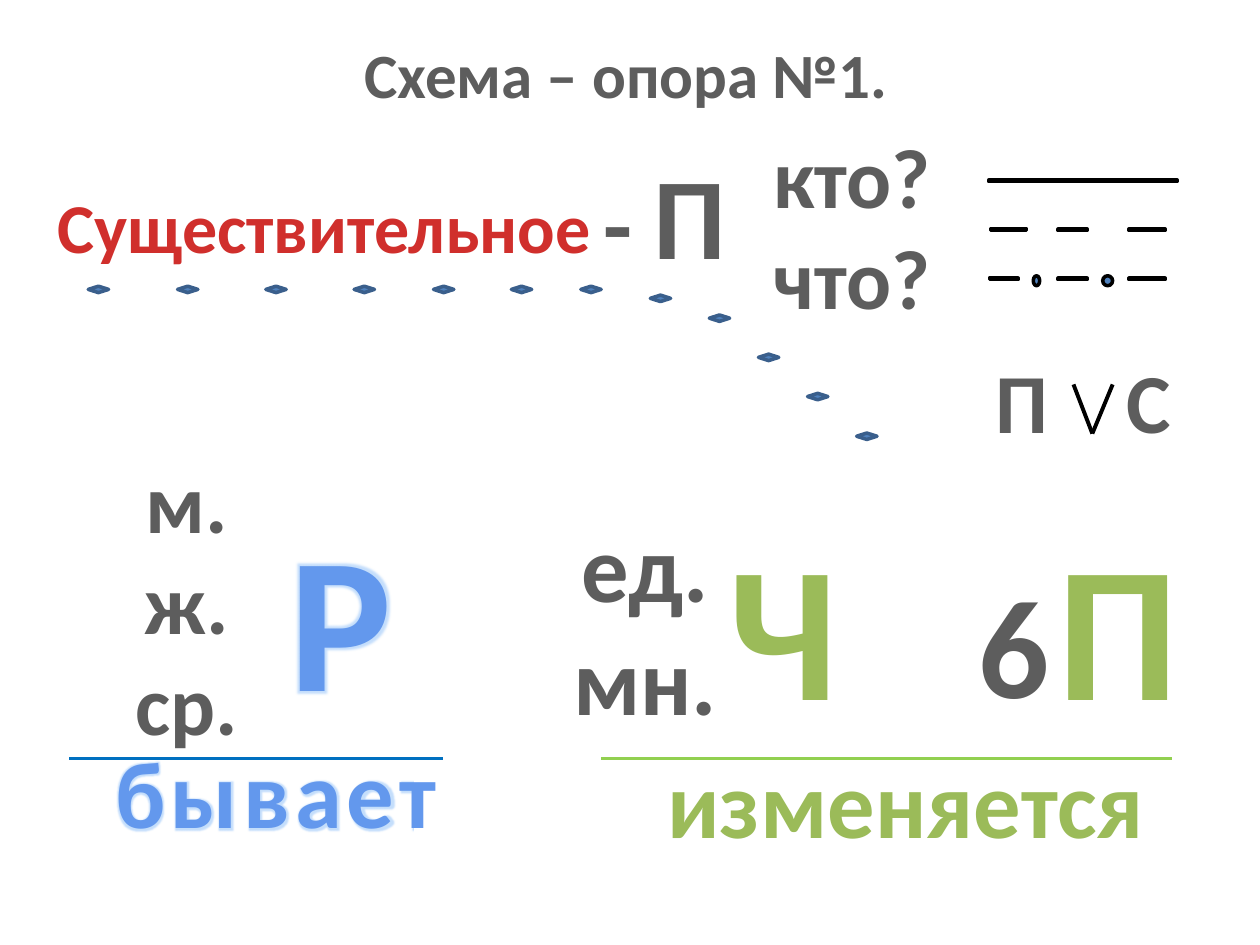
import pptx
import pptx.util
from lxml import etree
from pptx.dml.color import RGBColor
from pptx.enum.shapes import MSO_CONNECTOR, MSO_SHAPE
from pptx.enum.text import MSO_ANCHOR, PP_ALIGN
from pptx.oxml.ns import qn
from pptx.util import Cm, Pt

GREY = RGBColor(0x5D, 0x5D, 0x5D)
RED = RGBColor(0xD0, 0x2F, 0x2C)
GREEN = RGBColor(0x9B, 0xBB, 0x59)
BLUE = RGBColor(0x63, 0x98, 0xED)
BLACK = RGBColor(0, 0, 0)
MARK_FILL = RGBColor(0x4F, 0x81, 0xBD)
DIAMOND_LINE = RGBColor(0x3A, 0x5F, 0x8C)
LIME = RGBColor(0x92, 0xD0, 0x50)
AZURE = RGBColor(0x00, 0x70, 0xC0)
GLOW = "A6CDFB"

TITLE = "Схема – опора №1."
TITLE_BOX = (2.18, 0.58, 20.88, 1.8)

# Paragraphs, size in points, colour, box in cm (left, top, width, height)
LABELS = [
    (["Существительное"], 40, RED, (0.58, 3.58, 11.91, 1.96)),
    (["изменяется"], 54, GREEN, (11.91, 14.88, 12.7, 2.57)),
    (["П"], 110, GREEN, (20.45, 10.11, 4.17, 4.95)),
    (["6"], 80, GREY, (19.05, 11.13, 2.77, 3.68)),
    (["Ч"], 110, GREEN, (14.1, 10.11, 3.38, 4.95)),
    (["ед.", "мн."], 54, GREY, (10.92, 10.11, 4.17, 4.88)),
    (["м.", "ж.", "ср."], 48, GREY, (1.78, 8.94, 3.96, 6.4)),
    (["бывает"], 54, BLUE, (0.41, 14.68, 10.31, 2.57)),
    (["Р"], 110, BLUE, (5.16, 9.93, 3.4, 4.95)),
    (["кто?", "что?"], 48, GREY, (15.09, 2.39, 4.17, 4.37)),
]
DASH_BOX = (11.71, 2.77, 3.38, 3.07)
CASES_BOX = (19.81, 6.93, 5.2, 2.31)
CASES_TAB = 2.64

# Top of each row, then (left, width) of its dashes
MARK_HEIGHT = 0.13
DASH_ROWS = [
    (3.58, [(19.25, 5.16)]),
    (4.57, [(19.84, 0.99), (21.23, 0.79), (22.63, 0.99)]),
    (5.56, [(19.84, 0.79), (21.23, 0.79), (22.63, 0.99)]),
]
DOTS = [(20.83, 5.56, 0.13, 0.2), (22.23, 5.56, 0.2, 0.2)]

DIAMOND_WIDTH = 0.41
DIAMONDS = [(x, 5.77) for x in (1.78, 3.58, 5.36, 7.14, 8.74, 10.31, 11.71)] + [
    (13.11, 5.95), (14.3, 6.35), (15.29, 7.14), (16.28, 7.93), (17.27, 8.73)]

LINES = [
    (12.12, 15.29, 23.62, 15.29, LIME),
    (1.4, 15.29, 8.94, 15.29, AZURE),
    (21.64, 7.75, 22.02, 8.74, BLACK),
    (22.43, 7.75, 22.02, 8.74, BLACK),
]


def format_run(r, size, color):
    r.font.name = "Calibri"
    r.font.size = Pt(size)
    r.font.bold = True
    r.font.color.rgb = color


def add_glow(r):
    """Spread the letters and put a soft halo round them."""
    rPr = r.font._element
    rPr.set("spc", "300")
    effects = etree.Element(qn("a:effectLst"))
    glow = etree.SubElement(effects, qn("a:glow"), rad="45500")
    color = etree.SubElement(glow, qn("a:srgbClr"), val=GLOW)
    etree.SubElement(color, qn("a:alpha"), val="65000")
    rPr.find(qn("a:solidFill")).addnext(effects)


def fill_text(tf, paragraphs, size, color):
    tf.word_wrap = True
    tf.vertical_anchor = MSO_ANCHOR.TOP
    tf.text = "\n".join(paragraphs)
    for p in tf.paragraphs:
        p.alignment = PP_ALIGN.CENTER
        for r in p.runs:
            format_run(r, size, color)
            if color == BLUE:
                add_glow(r)


def add_label(s, paragraphs, size, color, box):
    tf = s.shapes.add_textbox(*map(Cm, box)).text_frame
    fill_text(tf, paragraphs, size, color)
    return tf


def add_mark(s, kind, box, line_color):
    sp = s.shapes.add_shape(kind, *map(Cm, box))
    sp.shadow.inherit = False
    sp.fill.solid()
    sp.fill.fore_color.rgb = MARK_FILL
    sp.line.color.rgb = line_color
    sp.line.width = Pt(2)


def add_line(s, x1, y1, x2, y2, color):
    line = s.shapes.add_connector(MSO_CONNECTOR.STRAIGHT, Cm(x1), Cm(y1), Cm(x2), Cm(y2))
    line.line.color.rgb = color
    line.line.width = Pt(2.25)
    etree.SubElement(line._element.spPr, qn("a:effectLst"))


def main():
    prs = pptx.Presentation()
    prs.slide_width, prs.slide_height = Cm(25.4), Cm(19.05)
    s = prs.slides.add_slide(prs.slide_layouts[5])

    title = s.shapes.title
    title.left, title.top, title.width, title.height = map(Cm, TITLE_BOX)
    fill_text(title.text_frame, [TITLE], 36, GREY)

    for label in LABELS:
        add_label(s, *label)

    p = add_label(s, ["- "], 54, GREY, DASH_BOX).paragraphs[0]
    r = p.add_run()
    r.text = "П"
    format_run(r, 66, GREY)

    p = add_label(s, ["П\tС"], 48, GREY, CASES_BOX).paragraphs[0]
    p.alignment = PP_ALIGN.LEFT
    tabs = etree.SubElement(p._p.get_or_add_pPr(), qn("a:tabLst"))
    etree.SubElement(tabs, qn("a:tab"), pos=str(Cm(CASES_TAB)), algn="l")

    for top, dashes in DASH_ROWS:
        for left, width in dashes:
            add_mark(s, MSO_SHAPE.MATH_MINUS, (left, top, width, MARK_HEIGHT), BLACK)
    for dot in DOTS:
        add_mark(s, MSO_SHAPE.FLOWCHART_CONNECTOR, dot, BLACK)
    for left, top in DIAMONDS:
        add_mark(s, MSO_SHAPE.FLOWCHART_DECISION,
                 (left, top, DIAMOND_WIDTH, MARK_HEIGHT), DIAMOND_LINE)
    for line in LINES:
        add_line(s, *line)

    prs.save("out.pptx")


if __name__ == "__main__":
    main()
